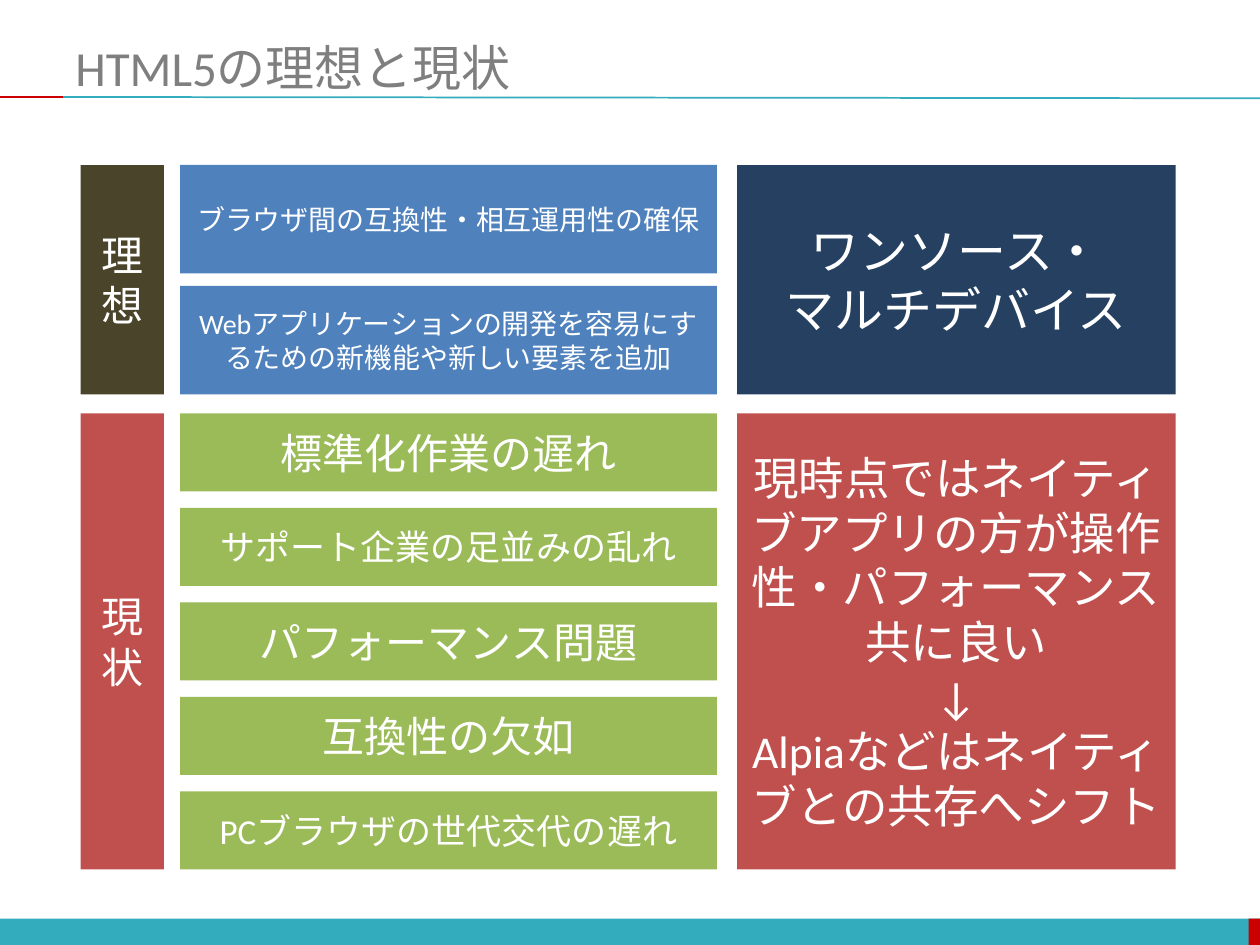
from lxml.etree import SubElement
from pptx import Presentation
from pptx.dml.color import RGBColor
from pptx.enum.shapes import MSO_CONNECTOR, MSO_SHAPE
from pptx.enum.text import MSO_ANCHOR, PP_ALIGN
from pptx.oxml.ns import qn
from pptx.util import Inches, Pt

FONT = "Calibri"
WHITE, GRAY, TEAL, RED = "FFFFFF", "7F7F7F", "33ACBD", "CC0000"
TITLE = "HTML5の理想と現状"

# Columns: left, width
LABEL, POINTS, SUMMARY = (0.64, 0.66), (1.43, 4.26), (5.85, 3.48)

SECTIONS = [
    {
        "top": 1.31, "height": 1.82, "row_height": 0.86,
        "label": ("理想", 24, "4A452A"),
        "point_fill": "4F81BD",
        "points": [
            ("ブラウザ間の互換性・相互運用性の確保", 16),
            ("Webアプリケーションの開発を容易にするための新機能や新しい要素を追加", 16),
        ],
        "summary": ("ワンソース・\nマルチデバイス", 28, "254061"),
    },
    {
        "top": 3.28, "height": 3.62, "row_height": 0.62,
        "label": ("現状", 24, "C0504D"),
        "point_fill": "9BBB59",
        "points": [
            ("標準化作業の遅れ", 24),
            ("サポート企業の足並みの乱れ", 20),
            ("パフォーマンス問題", 24),
            ("互換性の欠如", 24),
            ("PCブラウザの世代交代の遅れ", 20),
        ],
        "summary": (
            "現時点ではネイティブアプリの方が操作性・パフォーマンス共に良い\n"
            "↓\n"
            "Alpiaなどはネイティブとの共存へシフト", 26, "C0504D"),
    },
]


def color(value):
    return RGBColor.from_string(value)


def write(shape, text, size, fill=WHITE, align=PP_ALIGN.CENTER):
    """Fill a shape with text, one paragraph per line."""
    frame = shape.text_frame
    frame.word_wrap = True
    frame.vertical_anchor = MSO_ANCHOR.MIDDLE
    frame.text = text
    for para in frame.paragraphs:
        para.alignment = align
        para.font.name = FONT
        para.font.size = Pt(size)
        para.font.color.rgb = color(fill)


def add_block(page, left, top, width, height, fill, kind=MSO_SHAPE.RECTANGLE):
    block = page.shapes.add_shape(
        kind, Inches(left), Inches(top), Inches(width), Inches(height))
    block.shadow.inherit = False
    block.fill.solid()
    block.fill.fore_color.rgb = color(fill)
    block.line.fill.background()
    return block


def add_card(page, column, top, height, text, size, fill):
    left, width = column
    card = add_block(page, left, top, width, height, fill,
                     MSO_SHAPE.ROUNDED_RECTANGLE)
    card.adjustments[0] = 0
    write(card, text, size)


def add_rule(page, start, end, fill):
    rule = page.shapes.add_connector(
        MSO_CONNECTOR.STRAIGHT, *(Inches(value) for value in start + end))
    rule.line.color.rgb = color(fill)
    rule.line.width = Pt(1)
    SubElement(rule._element.spPr, qn("a:effectLst"))


def add_section(page, section):
    top, height = section["top"], section["height"]
    add_card(page, LABEL, top, height, *section["label"])
    add_card(page, SUMMARY, top, height, *section["summary"])
    points, row_height = section["points"], section["row_height"]
    pitch = (height - row_height) / (len(points) - 1)
    for index, (text, size) in enumerate(points):
        add_card(page, POINTS, top + index * pitch, row_height,
                 text, size, section["point_fill"])


def main():
    deck = Presentation()
    deck.slide_width, deck.slide_height = Inches(10), Inches(7.5)
    page = deck.slides.add_slide(deck.slide_layouts[6])

    add_block(page, 0, 7.29, 10, 0.21, TEAL)
    add_block(page, 9.91, 7.29, 0.09, 0.21, RED)
    add_rule(page, (0.5, 0.77), (10, 0.78), TEAL)
    add_rule(page, (0, 0.77), (0.5, 0.77), RED)

    title = page.shapes.add_textbox(
        Inches(0.5), Inches(0.3), Inches(9.5), Inches(0.46))
    write(title, TITLE, 28, GRAY, PP_ALIGN.LEFT)

    for section in SECTIONS:
        add_section(page, section)
    deck.save("out.pptx")


if __name__ == "__main__":
    main()
